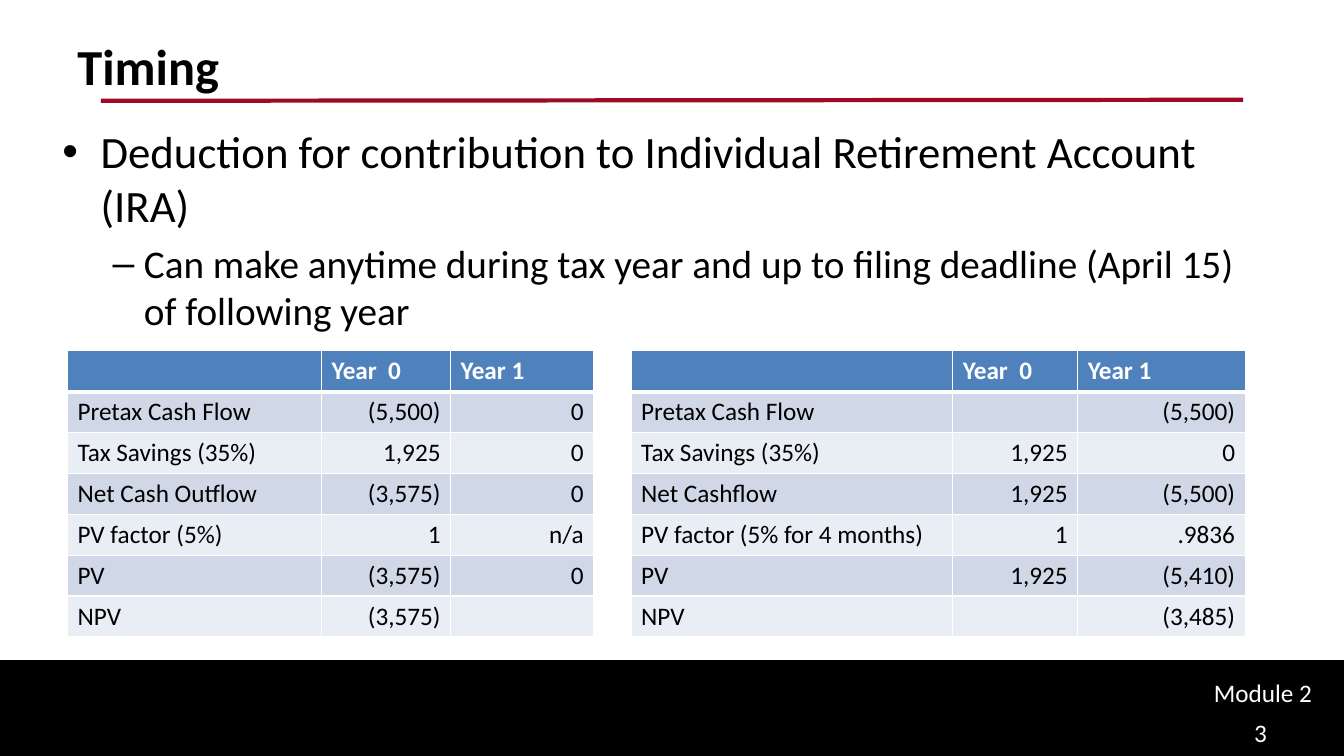
from dataclasses import dataclass

from lxml import etree
from pptx import Presentation
from pptx.dml.color import RGBColor
from pptx.enum import shapes, text
from pptx.oxml.ns import qn
from pptx.util import Inches, Pt


@dataclass(frozen=True)
class Theme:
    font: str = "Calibri"
    black: str = "000000"
    white: str = "FFFFFF"
    rule: str = "9E0926"
    header: str = "4F81BD"
    bands: tuple = ("D0D8E8", "E9EDF4")
    title: int = 36
    point: int = 32
    subpoint: int = 28
    small: int = 18


THEME = Theme()

PAY_IN_YEAR_0 = [
    ["", "Year  0", "Year 1"],
    ["Pretax Cash Flow", "(5,500)", "0"],
    ["Tax Savings (35%)", "1,925", "0"],
    ["Net Cash Outflow", "(3,575)", "0"],
    ["PV factor (5%)", "1", "n/a"],
    ["PV", "(3,575)", "0"],
    ["NPV", "(3,575)", ""],
]
PAY_IN_YEAR_1 = [
    ["", "Year  0", "Year 1"],
    ["Pretax Cash Flow", "", "(5,500)"],
    ["Tax Savings (35%)", "1,925", "0"],
    ["Net Cashflow", "1,925", "(5,500)"],
    ["PV factor (5% for 4 months)", "1", ".9836"],
    ["PV", "1,925", "(5,410)"],
    ["NPV", "", "(3,485)"],
]


def style(paragraph, size, color=THEME.black, bold=False):
    paragraph.font.name = THEME.font
    paragraph.font.size = Pt(size)
    paragraph.font.bold = bold
    paragraph.font.color.rgb = RGBColor.from_string(color)


def add_frame(slide, left, top, width, height):
    frame = slide.shapes.add_textbox(
        Inches(left), Inches(top), Inches(width), Inches(height)).text_frame
    frame.word_wrap = True
    return frame


def add_label(slide, wording, box, size, color, bold=False):
    label = add_frame(slide, *box).paragraphs[0]
    label.text = wording
    style(label, size, color, bold)


def add_bullet(paragraph, wording, mark, indent, hang, size):
    paragraph.text = wording
    properties = paragraph._p.get_or_add_pPr()
    properties.set("marL", str(Inches(indent)))
    properties.set("indent", str(-Inches(hang)))
    etree.SubElement(properties, qn("a:buFont"), typeface="Arial")
    etree.SubElement(properties, qn("a:buChar"), char=mark)
    style(paragraph, size)


def add_footer_band(slide):
    band = slide.shapes.add_shape(shapes.MSO_SHAPE.RECTANGLE, 0, Inches(6.56),
                                  Inches(13.33), Inches(0.94))
    band.shadow.inherit = False
    band.fill.solid()
    band.fill.fore_color.rgb = RGBColor.from_string(THEME.black)
    band.line.color.rgb = RGBColor.from_string(THEME.black)
    band.line.width = Pt(2)


def add_title_rule(slide):
    rule = slide.shapes.add_connector(shapes.MSO_CONNECTOR.STRAIGHT, Inches(1),
                                      Inches(1), Inches(12.33), Inches(0.99))
    rule.line.color.rgb = RGBColor.from_string(THEME.rule)
    rule.line.width = Pt(3)
    etree.SubElement(rule._element.spPr, qn("a:effectLst"))


def set_borders(cell, top, bottom):
    properties = cell._tc.get_or_add_tcPr()
    for side, width in (("L", 1), ("R", 1), ("T", top), ("B", bottom)):
        border = etree.SubElement(properties, qn(f"a:ln{side}"), w=str(Pt(width)))
        fill = etree.SubElement(border, qn("a:solidFill"))
        etree.SubElement(fill, qn("a:srgbClr"), val=THEME.white)


def fill_cell(cell, wording, row, column):
    is_header = row == 0
    set_borders(cell, top=3 if row == 1 else 1, bottom=3 if is_header else 1)
    cell.fill.solid()
    cell.fill.fore_color.rgb = RGBColor.from_string(
        THEME.header if is_header else THEME.bands[(row - 1) % 2])
    cell.text = wording
    entry = cell.text_frame.paragraphs[0]
    if column and not is_header:
        entry.alignment = text.PP_ALIGN.RIGHT
    style(entry, THEME.small, THEME.white if is_header else THEME.black, is_header)


def add_cash_flows(slide, left, widths, rows):
    table = slide.shapes.add_table(
        len(rows), len(widths), Inches(left), Inches(3.48),
        Inches(sum(widths)), Inches(2.84)).table
    for column, width in zip(table.columns, widths):
        column.width = Inches(width)
    for r, entries in enumerate(rows):
        for c, wording in enumerate(entries):
            fill_cell(table.cell(r, c), wording, r, c)


def main():
    deck = Presentation()
    deck.slide_width, deck.slide_height = Inches(13.33), Inches(7.5)
    slide = deck.slides.add_slide(deck.slide_layouts[6])

    add_footer_band(slide)
    add_title_rule(slide)
    add_label(slide, "Timing", (0.67, 0.3, 12, 0.7), THEME.title, THEME.black, True)

    body = add_frame(slide, 0.52, 1.18, 12.14, 2.25)
    add_bullet(body.paragraphs[0],
               "Deduction for contribution to Individual Retirement Account (IRA)",
               "•", 0.38, 0.38, THEME.point)
    deadline = body.add_paragraph()
    deadline.level = 1
    deadline.space_before = Pt(5.6)
    add_bullet(deadline,
               "Can make anytime during tax year and up to filing deadline "
               "(April 15) of following year",
               "–", 0.81, 0.31, THEME.subpoint)

    add_label(slide, "Module 2", (11.94, 6.67, 1.32, 0.4), THEME.small, THEME.white)
    add_label(slide, "3", (12.34, 7.07, 0.91, 0.43), THEME.small, THEME.white)

    add_cash_flows(slide, 0.67, (2.52, 1.28, 1.42), PAY_IN_YEAR_0)
    add_cash_flows(slide, 6.26, (3.19, 1.24, 1.66), PAY_IN_YEAR_1)

    deck.save("out.pptx")


if __name__ == "__main__":
    main()
